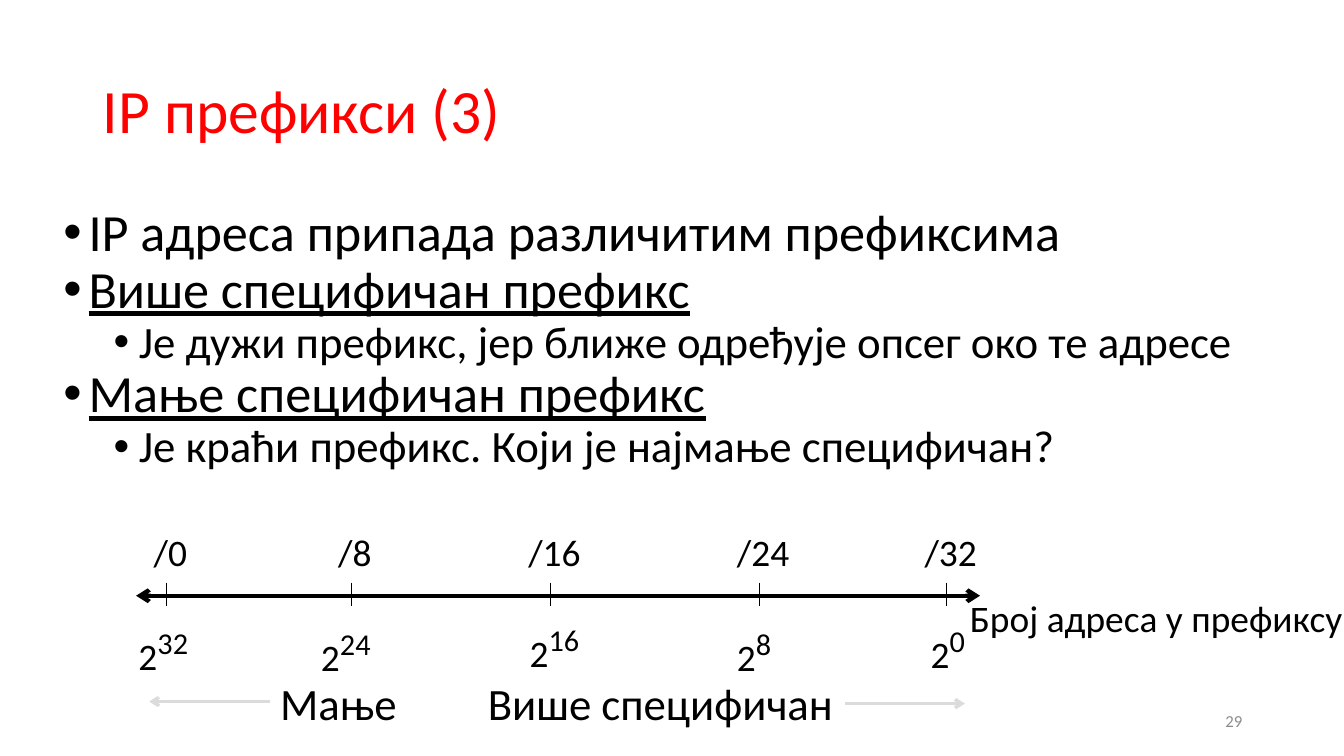
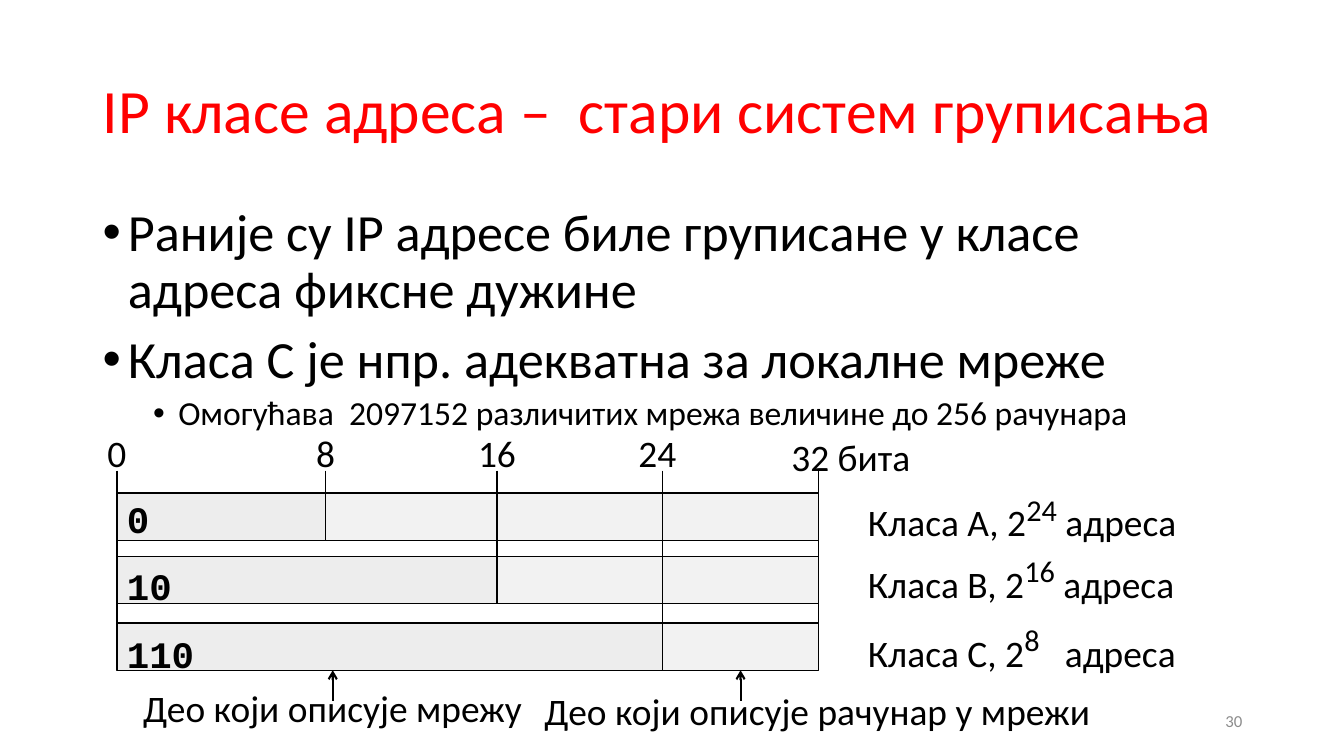
from lxml import etree
from pptx import Presentation, util as u
from pptx.dml.color import RGBColor
from pptx.enum import shapes, text
from pptx.oxml import ns

COLORS = {"title": "FF0000", "ink": "000000", "number": "8C8C8C",
          "hint": "DBDBDB", "network": "EDEDED", "host": "F2F2F2"}
WIDTH, HEIGHT = 13.33, 7.5
LEFT, CENTER, RIGHT = text.PP_ALIGN.LEFT, text.PP_ALIGN.CENTER, text.PP_ALIGN.RIGHT
BODY, LABEL, POWER = 37.3, 26.7, 37.3


# Shared helpers
def color(name):
    return RGBColor.from_string(COLORS[name])


def place(sp, x, y, w, h):
    for name, value in zip(("left", "top", "width", "height"), (x, y, w, h)):
        setattr(sp, name, u.Inches(value))


def add_run(p, words, size, ink="ink", **fmt):
    r = p.add_run()
    r.text = words
    for name, value in {"name": "Calibri", "size": u.Pt(size), **fmt}.items():
        setattr(r.font, name, value)
    r.font.color.rgb = color(ink)
    return r


def write(p, words, size=LABEL, align=LEFT, spacing=1.0, before=0, **fmt):
    """Fill a paragraph; text between carets is raised."""
    p.alignment, p.line_spacing, p.space_before = align, spacing, u.Pt(before)
    for i, part in enumerate(words.split("^")):
        if part:
            r = add_run(p, part, POWER if i % 2 else size, **fmt)
            if i % 2:
                r.font._element.set("baseline", "30000")


def textbox(s, x, y, w, h, wrap=False):
    sp = s.shapes.add_textbox(*map(u.Inches, (x, y, w, h)))
    sp.text_frame.word_wrap = wrap
    return sp.text_frame


def label(s, words, x, y, w, h=0.55, **fmt):
    write(textbox(s, x, y, w, h).paragraphs[0], words, **fmt)


def centered(s, words, cx, y, w=1.0, h=0.55, **fmt):
    label(s, words, cx - w / 2, y, w, h, align=CENTER, **fmt)


def line(s, x1, y1, x2, y2, width, ink="ink", ends=()):
    c = s.shapes.add_connector(shapes.MSO_CONNECTOR.STRAIGHT,
                               *map(u.Inches, (x1, y1, x2, y2)))
    c.line.width, c.line.color.rgb = u.Pt(width), color(ink)
    props = c._element.spPr
    for end in ends:
        etree.SubElement(props.find(ns.qn("a:ln")), ns.qn(f"a:{end}"), type="arrow")
    etree.SubElement(props, ns.qn("a:effectLst"))
    return c


def rectangle(s, x, y, w, h, fill):
    sp = s.shapes.add_shape(shapes.MSO_SHAPE.RECTANGLE, *map(u.Inches, (x, y, w, h)))
    sp.shadow.inherit = False
    sp.fill.solid()
    sp.fill.fore_color.rgb = color(fill)
    sp.line.color.rgb, sp.line.width = color("ink"), u.Pt(1)
    return sp


# Slide frame: title and page number
def new_slide(prs, title, number):
    s = prs.slides.add_slide(prs.slide_layouts[5])
    place(s.shapes.title, 0.92, 0.4, 11.5, 1.45)
    tf = s.shapes.title.text_frame
    tf.auto_size, tf.word_wrap = text.MSO_AUTO_SIZE.NONE, True
    tf.vertical_anchor = text.MSO_ANCHOR.MIDDLE
    write(tf.paragraphs[0], title, 44, spacing=0.9, ink="title")
    tf = textbox(s, 9.42, 6.95, 3, 0.4, wrap=True)
    tf.vertical_anchor = text.MSO_ANCHOR.MIDDLE
    write(tf.paragraphs[0], str(number), 12, RIGHT, ink="number")
    return s


# Bulleted body; items are (level, words, size, underline, space before)
def bullets(s, box, items):
    tf = textbox(s, *box, wrap=True)
    for i, (level, words, size, underline, before) in enumerate(items):
        p = tf.add_paragraph() if i else tf.paragraphs[0]
        p.level = level
        write(p, words, size, spacing=0.9, before=before, underline=underline)
        props = p._p.get_or_add_pPr()
        props.set("marL", str(u.Inches(0.25 + 0.5 * level)))
        props.set("indent", str(u.Inches(-0.25)))
        etree.SubElement(props, ns.qn("a:buFont"), typeface="Arial")
        etree.SubElement(props, ns.qn("a:buChar"), char="•")


# Prefix axis with its ticks, powers and directions
def prefix_axis(s, x, y, w):
    line(s, x, y, x + w, y, 3, ends=("headEnd", "tailEnd"))
    # Tick offset, power offset, power drop
    ticks = [(0.3, 0.27, 0.17), (2.13, 2.08, 0.18), (4.11, 4.15, 0.14),
             (6.18, 6.13, 0.18), (8.04, 8.05, 0.15)]
    for i, (tick, power, drop) in enumerate(ticks):
        line(s, x + tick, y - 0.13, x + tick, y + 0.1, 0.5)
        centered(s, f"/{8 * i}", x + tick + 0.04, y - 0.71)
        centered(s, f"2^{32 - 8 * i}^", x + power, y + drop)
    centered(s, "Број адреса у префиксу", x + 10.12, y + 0.03, 3.92, 0.46, spacing=0.8)
    for words, left, width, start, end, drop in (
            ("Мање", 1.33, 1.47, 1.33, 0.13, 1.05),
            ("Више специфичан", 3.39, 3.66, 7.03, 8.22, 1.07)):
        line(s, x + start, y + drop, x + end, y + drop, 2.25, "hint", ["tailEnd"])
        label(s, words, x + left, y + 0.74, width, 0.64, size=32)


# Address classes drawn on a 32-bit ruler
def class_diagram(s, x, y):
    bits = {0: x, 8: x + 2.07, 16: x + 3.77, 24: x + 5.41, 32: x + 6.96}
    row_h = 0.47
    rows = [("A", 8, y + 0.22, "24^ адреса", -0.13),
            ("B", 16, y + 0.85, "16^ адреса", -0.15),
            ("C", 24, y + 1.51, "8^   адреса", -0.13)]
    bottom = rows[-1][2] + row_h
    for name, split, top, count, shift in rows:
        rectangle(s, x, top, bits[split] - x, row_h, "network")
        host = rectangle(s, bits[split], top, bits[32] - bits[split], row_h, "host")
        label(s, f"Класа {name}, 2^{count}", x + 7.35, top + shift, 3.81)

    # Leading bits of each class
    tf = textbox(s, x, y - 0.02, 2, 2.12)
    for i, code in enumerate(("0", "10", "110")):
        p = tf.add_paragraph() if i else tf.paragraphs[0]
        write(p, code, spacing=1.5, name="Courier New", bold=True)

    # Ruler lines and numbers
    ends = {8: rows[0][2] + row_h, 16: rows[1][2] + row_h}
    for bit, cx in bits.items():
        line(s, cx, y, cx, ends.get(bit, bottom), 1)
    for words, cx, top in (("0", bits[0], y - 0.45), ("8", bits[8], y - 0.45),
                           ("16", bits[16], y - 0.45), ("24", bits[24] - 0.05, y - 0.45),
                           ("32 бита", bits[32] + 0.32, y - 0.41)):
        centered(s, words, cx, top, 1.4)

    # Captions under the last row
    host_x = (bits[24] + bits[32]) / 2
    line(s, x + 2.14, bottom + 0.3, x + 2.14, bottom, 1.5, ends=["tailEnd"])
    arrow = line(s, host_x, bottom + 0.3, host_x, bottom, 1.5, ends=["tailEnd"])
    arrow.end_connect(host, 2)
    centered(s, "Део који описује мрежу", x + 2.14, y + 2.16, 3.99, 0.46, spacing=0.8)
    centered(s, "Део који описује рачунар у мрежи", x + 6.95, y + 2.19, 5.65, 0.46,
             spacing=0.8)


def main():
    prs = Presentation()
    prs.slide_width, prs.slide_height = u.Inches(WIDTH), u.Inches(HEIGHT)

    s = new_slide(prs, "IP префикси (3)", 29)
    bullets(s, (0.53, 2, 12.2, 2.9), [
        (0, "IP адреса припада различитим префиксима", BODY, False, 0),
        (0, "Више специфичан префикс", BODY, True, 0),
        (1, "Је дужи префикс, јер ближе одређује опсег око те адресе", 32, False, 0),
        (0, "Мање специфичан префикс", BODY, True, 0),
        (1, "Је краћи префикс. Који је најмање специфичан?", 32, False, 0)])
    prefix_axis(s, 1.35, 5.91, 8.37)

    s = new_slide(prs, "IP класе адреса –  стари систем груписања", 30)
    bullets(s, (0.92, 2, 11.5, 2.4), [
        (0, "Раније су IP адресе биле груписане у класе адреса фиксне дужине",
         BODY, False, 10),
        (0, "Класа C је нпр. адекватна за локалне мреже", BODY, False, 10),
        (1, "Омогућава  2097152 различитих мрежа величине до 256 рачунара",
         24, False, 5)])
    class_diagram(s, 1.16, 4.67)

    prs.save("out.pptx")


if __name__ == "__main__":
    main()
